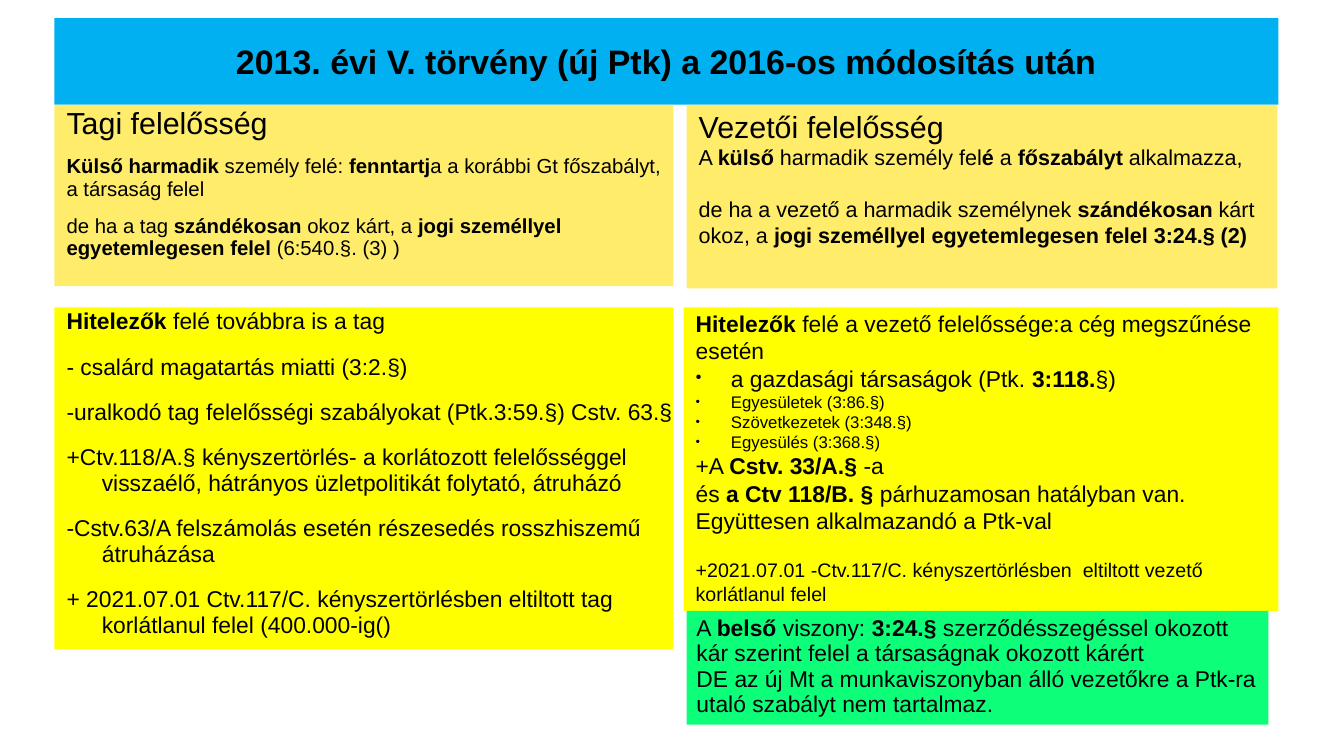
from lxml.etree import SubElement
from pptx import Presentation
from pptx.dml.color import RGBColor
from pptx.enum.shapes import MSO_SHAPE
from pptx.enum.text import MSO_ANCHOR, PP_ALIGN
from pptx.oxml.ns import qn
from pptx.util import Inches, Pt

BLACK = RGBColor(0x00, 0x00, 0x00)
BLUE = RGBColor(0x00, 0xB0, 0xF0)
CREAM = RGBColor(0xFE, 0xEC, 0x6A)
YELLOW = RGBColor(0xFF, 0xFF, 0x00)
GREEN = RGBColor(0x0D, 0xFF, 0x7A)
BODY = 16.3

# Content: (style, size, space before, text), with bold parts between asterisks
TITLE = [("center", 24.2, 0, "*2013. évi V. törvény (új Ptk) a 2016-os módosítás után*")]
MEMBER = [
    ("plain", 21.7, 14.2, "Tagi felelősség"),
    ("plain", 14.5, 10, "*Külső harmadik* személy felé: *fenntartj*a a korábbi Gt főszabályt, a társaság felel"),
    ("plain", 14.5, 10, "de ha a tag *szándékosan* okoz kárt, a *jogi személlyel egyetemlegesen felel *(6:540.§. (3) )"),
]
LEADER = [
    ("plain", 21.7, 0, "Vezetői felelősség"),
    ("plain", 15.4, 0, "A *külső *harmadik személy fel*é* a *főszabályt *alkalmazza,"),
    ("plain", 15.4, 18.5, "de ha a vezető a harmadik személynek *szándékosan* kárt okoz, a "
     "*jogi személlyel egyetemlegesen felel 3:24.§ (2)*"),
]
LEADER_DEBT = [
    ("plain", BODY, 0, "*Hitelezők* felé a vezető felelőssége:a cég megszűnése esetén"),
    ("bullet", BODY, 0, "a gazdasági társaságok (Ptk. *3:118.*§)"),
    ("bullet", 12, 0, "Egyesületek (3:86.§)"),
    ("bullet", 12, 0, "Szövetkezetek (3:348.§)"),
    ("bullet", 12, 0, "Egyesülés (3:368.§)"),
    ("plain", BODY, 0, "+A *Cstv. 33/A.§ *-a"),
    ("plain", BODY, 0, "és *a Ctv 118/B. § *párhuzamosan hatályban van. Együttesen alkalmazandó a Ptk-val"),
    ("plain", 14, 17, "+2021.07.01 -Ctv.117/C. kényszertörlésben  eltiltott vezető korlátlanul felel"),
]
MEMBER_DEBT = [
    ("plain", BODY, 14.2, "*Hitelezők* felé továbbra is a tag"),
    ("hang", BODY, 14.2, "- csalárd magatartás miatti (3:2.§)"),
    ("hang", BODY, 14.2, "-uralkodó tag felelősségi szabályokat (Ptk.3:59.§) Cstv. 63.§"),
    ("hang", BODY, 14.2, "+Ctv.118/A.§ kényszertörlés- a korlátozott felelősséggel visszaélő, "
     "hátrányos üzletpolitikát folytató, átruházó"),
    ("hang", BODY, 14.2, "-Cstv.63/A felszámolás esetén részesedés rosszhiszemű átruházása"),
    ("hang", BODY, 14.2, "+ 2021.07.01 Ctv.117/C. kényszertörlésben eltiltott tag korlátlanul felel (400.000-ig()"),
]
INNER = [
    ("flush", BODY, 0, "A *belső* viszony: *3:24.§* szerződésszegéssel okozott kár szerint "
     "felel a társaságnak okozott kárért"),
    ("flush", BODY, 0, "DE az új Mt a munkaviszonyban álló vezetőkre a Ptk-ra utaló szabályt nem tartalmaz."),
]

# Panels: (left, top, width, height), fill, (side, top inset), line spacing, content
LEFT, RIGHT, WIDE = 0.54, 6.81, 6.14
PANELS = [
    ((LEFT, 0.18, 12.14, 0.86), BLUE, (0.09, 0.04), 1, TITLE),
    ((LEFT, 1.04, WIDE, 1.8), CREAM, (0, 0.03), 0.93, MEMBER),
    ((RIGHT, 1.04, 5.86, 1.82), CREAM, (0, 0.03), 1, LEADER),
    ((6.78, 3.05, 5.9, 3.01), YELLOW, (0, 0.02), 1, LEADER_DEBT),
    ((LEFT, 3.05, WIDE, 3.39), YELLOW, (0, 0.02), 0.93, MEMBER_DEBT),
    ((RIGHT, 6.06, 5.77, 1.13), GREEN, (0.1, 0.05), 0.93, INNER),
]

# Style: left margin and first-line indent
INDENTS = {"center": (0, 0), "flush": (0, 0), "plain": (0.12, 0),
           "hang": (0.47, -0.35), "bullet": (0.47, -0.35)}


def add_bullet(props):
    color = SubElement(props, qn("a:buClr"))
    SubElement(color, qn("a:srgbClr"), val=str(BLACK))
    SubElement(props, qn("a:buSzPct"), val="33000")
    SubElement(props, qn("a:buChar"), char="●")


def write(para, style, size, before, text, spacing):
    para.alignment = PP_ALIGN.CENTER if style == "center" else PP_ALIGN.LEFT
    para.line_spacing = spacing
    para.space_before = Pt(before)
    props = para._p.get_or_add_pPr()
    margin, indent = INDENTS[style]
    props.set("marL", str(Inches(margin)))
    props.set("indent", str(Inches(indent)))
    if style == "bullet":
        add_bullet(props)
    for i, part in enumerate(text.split("*")):
        if part:
            run = para.add_run()
            run.text = part
            run.font.name = "Arial"
            run.font.size = Pt(size)
            run.font.bold = i % 2 == 1
            run.font.color.rgb = BLACK


def add_panel(slide, place, fill, inset, spacing, lines):
    panel = slide.shapes.add_shape(MSO_SHAPE.RECTANGLE, *map(Inches, place))
    panel.shadow.inherit = False
    panel.fill.solid()
    panel.fill.fore_color.rgb = fill
    panel.line.fill.background()
    frame = panel.text_frame
    frame.word_wrap = True
    frame.vertical_anchor = MSO_ANCHOR.MIDDLE if lines is TITLE else MSO_ANCHOR.TOP
    side, top = map(Inches, inset)
    frame.margin_left = frame.margin_right = side
    frame.margin_top, frame.margin_bottom = top, side and Inches(0.05)
    for i, line in enumerate(lines):
        para = frame.add_paragraph() if i else frame.paragraphs[0]
        write(para, *line, spacing)


def main():
    deck = Presentation()
    deck.slide_width, deck.slide_height = Inches(13.33), Inches(7.5)
    slide = deck.slides.add_slide(deck.slide_layouts[6])
    for panel in PANELS:
        add_panel(slide, *panel)
    deck.save("out.pptx")


if __name__ == "__main__":
    main()
